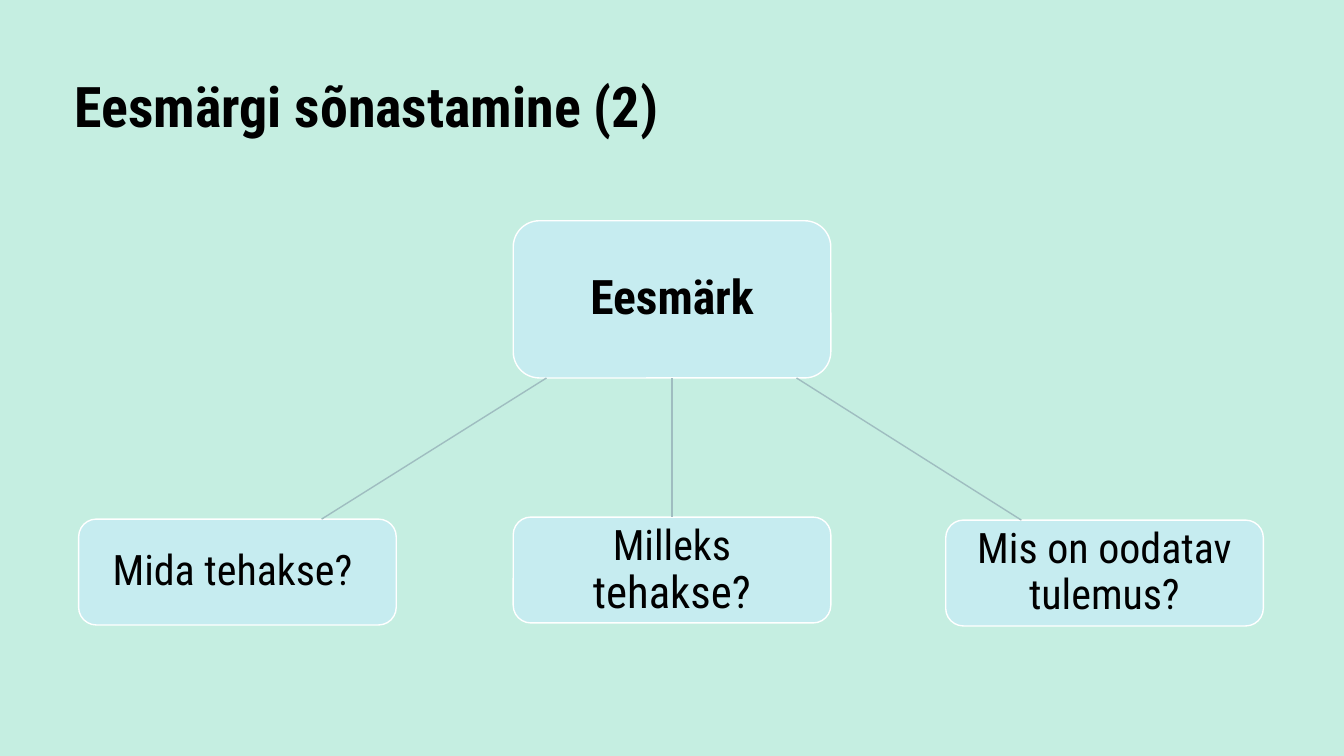
"""Build the slide that splits a goal into three questions."""
from dataclasses import dataclass

from pptx import Presentation
from pptx.dml.color import RGBColor as RGB
from pptx.enum.shapes import MSO_CONNECTOR as LINK, MSO_SHAPE as SHAPE
from pptx.enum.text import MSO_ANCHOR as ANCHOR, MSO_AUTO_SIZE as FIT, PP_ALIGN as ALIGN
from pptx.oxml.ns import qn
from pptx.util import Inches, Pt
from lxml.etree import SubElement


@dataclass(frozen=True)
class Theme:
    font: str = "Roboto Condensed"
    back: RGB = RGB(0xC5, 0xEE, 0xE1)
    fill: RGB = RGB(0xC6, 0xEC, 0xF0)
    edge: RGB = RGB(0xFF, 0xFF, 0xFF)
    link: RGB = RGB(0x9F, 0xBD, 0xC0)
    ink: RGB = RGB(0, 0, 0)
    title: int = 40
    goal: int = 34
    large: int = 32
    base: int = 30


theme = Theme()


def write(frame, parts, align, bold=False):
    frame.word_wrap = True
    frame.auto_size = FIT.NONE
    frame.vertical_anchor = ANCHOR.MIDDLE
    line = frame.paragraphs[0]
    line.alignment = align
    line.line_spacing = 0.9
    for text, size in parts:
        run = line.add_run()
        run.text = text
        font = run.font
        font.name = theme.font
        font.size = Pt(size)
        font.bold = bold
        font.color.rgb = theme.ink


def add_box(left, top, height, inset, parts, bold=False):
    box = slide.shapes.add_shape(
        SHAPE.ROUNDED_RECTANGLE, Inches(left), Inches(top), Inches(width), Inches(height)
    )
    box.shadow.inherit = False
    box.fill.solid()
    box.fill.fore_color.rgb = theme.fill
    box.line.color.rgb = theme.edge
    box.line.width = Pt(1)
    frame = box.text_frame
    frame.margin_left = frame.margin_right = Inches(inset)
    frame.margin_top = frame.margin_bottom = Inches(inset)
    write(frame, parts, ALIGN.CENTER, bold)
    return box


deck = Presentation()
deck.slide_width = Inches(13.33)
deck.slide_height = Inches(7.5)
slide = deck.slides.add_slide(deck.slide_layouts[5])
slide.background.fill.solid()
slide.background.fill.fore_color.rgb = theme.back

title = slide.shapes.title
title.left, title.top = Inches(0.64), Inches(0.63)
title.width, title.height = Inches(12.05), Inches(0.91)
write(title.text_frame, [("Eesmärgi sõnastamine (2)", theme.title)], ALIGN.LEFT, True)

width = 3.15
goal_top, goal_high = 2.19, 1.56
goal = add_box(5.09, goal_top, goal_high, 0.17, [("Eesmärk", theme.goal)], True)
base = goal_top + goal_high

branches = [
    (0.78, 5.15, 5.42, 3.19, [("Mida tehakse? ", theme.base)]),
    (5.09, 5.13, 6.67, 6.67, [("Milleks", theme.base), (" tehakse?", theme.large)]),
    (9.38, 5.16, 7.9, 10.13, [("Mis on oodatav tulemus?", theme.base)]),
]
for left, top, start, end, parts in branches:
    box = add_box(left, top, 1.05, 0.13, parts)
    link = slide.shapes.add_connector(
        LINK.STRAIGHT, Inches(start), Inches(base), Inches(end), Inches(top)
    )
    link.line.color.rgb = theme.link
    link.line.width = Pt(1)
    SubElement(link.element.spPr, qn("a:effectLst"))
    if start == end:
        link.begin_connect(goal, 2)
        link.end_connect(box, 0)

deck.save("out.pptx")
